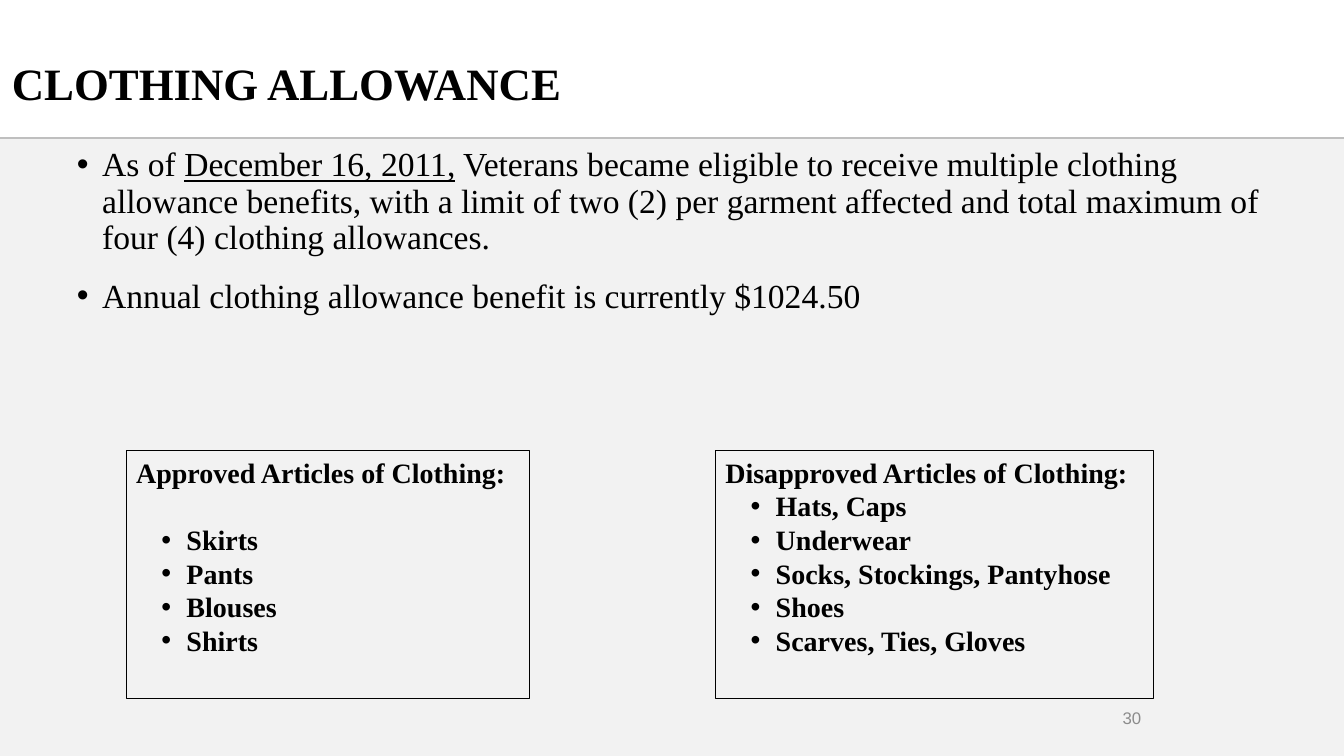
"""Build the clothing allowance slide."""
from lxml.etree import SubElement
from pptx import Presentation
from pptx.dml.color import RGBColor
from pptx.enum.shapes import MSO_CONNECTOR, MSO_SHAPE
from pptx.enum.text import MSO_ANCHOR, PP_ALIGN
from pptx.oxml.ns import qn
from pptx.util import Cm, Pt

TITLE = "CLOTHING ALLOWANCE"
NUMBER = "30"
POINTS = [
    [("As of ", False), ("December 16, 2011,", True),
     (" Veterans became eligible to receive multiple clothing allowance benefits, "
      "with a limit of two (2) per garment affected and total maximum of "
      "four (4) clothing allowances.", False)],
    [("Annual clothing allowance benefit is currently $1024.50", False)],
]
LISTS = [
    {"head": "Approved Articles of Clothing:", "left": 3.18, "width": 10.16, "gap": 24,
     "items": ["Skirts", "Pants", "Blouses", "Shirts"]},
    {"head": "Disapproved Articles of Clothing:", "left": 18.03, "width": 11.05, "gap": 0,
     "items": ["Hats, Caps", "Underwear", "Socks, Stockings, Pantyhose", "Shoes",
               "Scarves, Ties, Gloves"]},
]

SERIF, SANS = "Times New Roman", "Arial"
BLACK = RGBColor(0, 0, 0)
PALE = RGBColor(0xF2, 0xF2, 0xF2)
RULE = RGBColor(0xBF, 0xBF, 0xBF)
GRAY = RGBColor(0x8C, 0x8C, 0x8C)
WIDE, HIGH = Cm(33.87), Cm(19.05)
EDGE = Cm(3.47)
STEP = Cm(0.635)


def style(para, size, bold=False, face=SERIF, color=BLACK):
    font = para.font
    font.size, font.bold, font.name = Pt(size), bold, face
    font.color.rgb = color


def bullet(para, left):
    props = para._p.get_or_add_pPr()
    props.set("marL", str(left))
    props.set("indent", str(-STEP))
    SubElement(props, qn("a:buFont"), typeface=SANS)
    SubElement(props, qn("a:buChar"), char="•")


def grow(frame, index):
    return frame.add_paragraph() if index else frame.paragraphs[0]


def add_text(slide, left, top, width, height, anchor=MSO_ANCHOR.TOP):
    box = slide.shapes.add_textbox(Cm(left), Cm(top), Cm(width), Cm(height))
    frame = box.text_frame
    frame.word_wrap = True
    frame.vertical_anchor = anchor
    return frame


def add_ground(slide):
    panel = slide.shapes.add_shape(MSO_SHAPE.RECTANGLE, 0, EDGE, WIDE, HIGH - EDGE)
    panel.shadow.inherit = False
    panel.fill.solid()
    panel.fill.fore_color.rgb = PALE
    panel.line.fill.background()
    rule = slide.shapes.add_connector(MSO_CONNECTOR.STRAIGHT, 0, EDGE, WIDE, EDGE)
    rule.line.color.rgb = RULE
    rule.line.width = Pt(1.5)
    SubElement(rule._element.spPr, qn("a:effectLst"))


def add_points(slide):
    frame = add_text(slide, 1.69, 3.6, 30.48, 7.24)
    for index, parts in enumerate(POINTS):
        para = grow(frame, index)
        para.line_spacing = 0.9
        para.space_before = Pt(10 if index else 0)
        para.space_after = Pt(6)
        bullet(para, STEP)
        style(para, 24)
        for text, under in parts:
            run = para.add_run()
            run.text = text
            if under:
                run.font.underline = True


def add_list(slide, data):
    box = slide.shapes.add_shape(MSO_SHAPE.RECTANGLE, Cm(data["left"]), Cm(11.35),
                                 Cm(data["width"]), Cm(6.25))
    box.shadow.inherit = False
    box.fill.background()
    box.line.color.rgb = BLACK
    box.line.width = Pt(0.75)
    frame = box.text_frame
    frame.word_wrap = True
    frame.vertical_anchor = MSO_ANCHOR.TOP
    for index, text in enumerate([data["head"], *data["items"]]):
        para = grow(frame, index)
        para.text = text
        para.alignment = PP_ALIGN.LEFT
        if index == 1 and data["gap"]:
            para.space_before = Pt(data["gap"])
        if index:
            bullet(para, 2 * STEP)
        style(para, 20, bold=True)


def main():
    deck = Presentation()
    deck.slide_width, deck.slide_height = WIDE, HIGH
    slide = deck.slides.add_slide(deck.slide_layouts[6])
    add_ground(slide)
    add_points(slide)
    page = add_text(slide, 23.29, 17.58, 5.72, 1.01, MSO_ANCHOR.MIDDLE).paragraphs[0]
    page.text = NUMBER
    page.alignment = PP_ALIGN.RIGHT
    style(page, 12, face=SANS, color=GRAY)
    for data in LISTS:
        add_list(slide, data)
    title = add_text(slide, 0.05, 1.07, 22.78, 2.03, MSO_ANCHOR.MIDDLE).paragraphs[0]
    title.text = TITLE
    style(title, 32, bold=True)
    deck.save("out.pptx")


if __name__ == "__main__":
    main()
